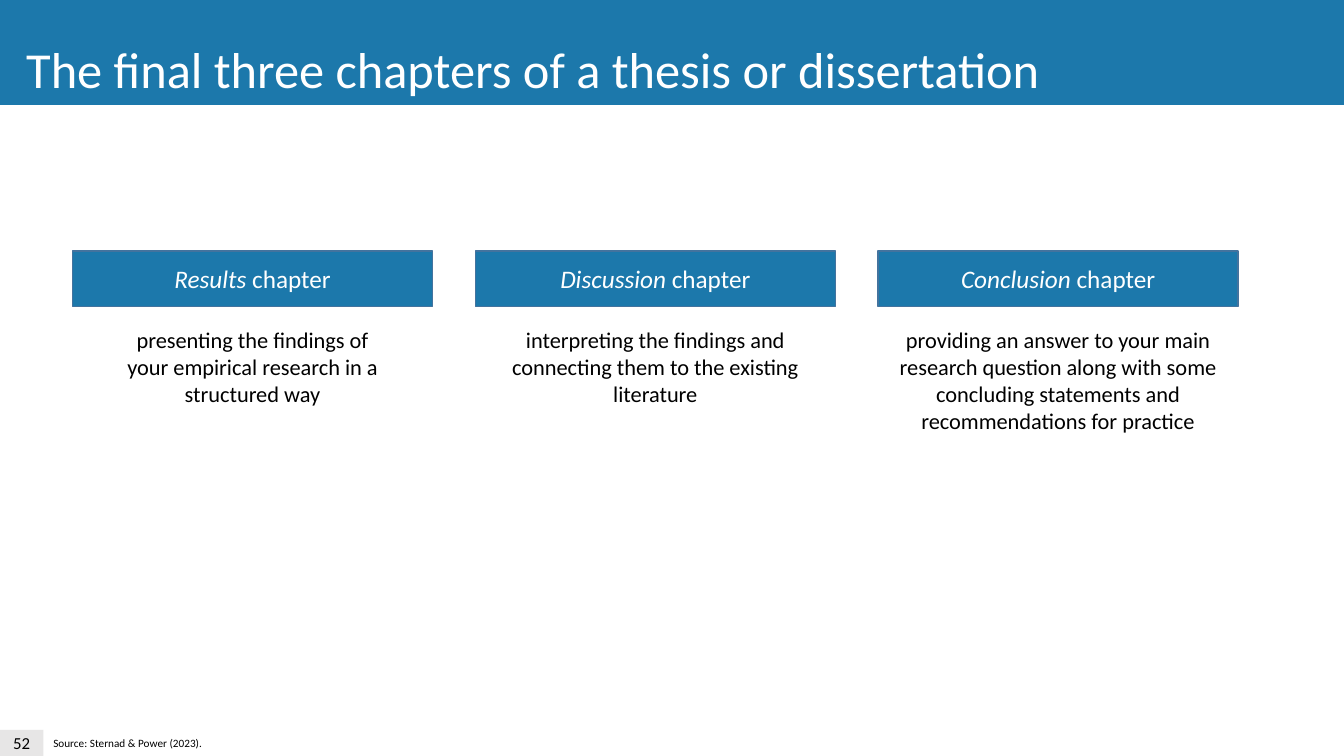
from pptx import Presentation
from pptx.dml.color import RGBColor
from pptx.enum.shapes import MSO_SHAPE as Preset
from pptx.enum.text import MSO_ANCHOR as Anchor, MSO_AUTO_SIZE as AutoSize, PP_ALIGN as Align
from pptx.util import Pt

EMU_PER_PX = 9144  # 100 px to the inch
FONT = "Calibri"
COLORS = {
    "blue": "1C78AB",
    "outline": "43739E",
    "grey": "E7E6E6",
    "white": "FFFFFF",
    "black": "000000",
}
CHAPTERS = [  # name, description, description width
    ("Results", "presenting the findings of your empirical research in a structured way", 275),
    ("Discussion", "interpreting the findings and connecting them to the existing literature", 357),
    ("Conclusion", "providing an answer to your main research question along with some "
                   "concluding statements and recommendations for practice", 403),
]


def px(length):
    return round(length * EMU_PER_PX)


def color(name):
    return RGBColor.from_string(COLORS[name])


def place(shape, box):
    for name, length in zip(("left", "top", "width", "height"), box):
        setattr(shape, name, px(length))


def write(shape, runs, size, color_name, align=Align.LEFT, **frame_format):
    """Write (text, italic) runs as one paragraph."""
    frame = shape.text_frame
    settings = {"word_wrap": True, "vertical_anchor": Anchor.TOP, "auto_size": AutoSize.NONE}
    for name, value in (settings | frame_format).items():
        setattr(frame, name, value)
    paragraph = frame.paragraphs[0]
    paragraph.alignment = align
    for text, italic in runs:
        run = paragraph.add_run()
        run.text = text
        font_format = {"name": FONT, "size": Pt(size), "italic": italic}
        for name, value in font_format.items():
            setattr(run.font, name, value)
        run.font.color.rgb = color(color_name)


def add_box(slide, box, fill, outline=None):
    shape = slide.shapes.add_shape(Preset.RECTANGLE, *map(px, box))
    shape.shadow.inherit = False
    shape.fill.solid()
    shape.fill.fore_color.rgb = color(fill)
    if outline:
        shape.line.color.rgb = color(outline)
        shape.line.width = Pt(1)
    else:
        shape.line.fill.background()
    return shape


def add_text(slide, box, text, size, **formats):
    shape = slide.shapes.add_textbox(*map(px, box))
    write(shape, [(text, False)], size, "black", **formats)


def add_header(slide, box, text):
    left, top, width, height = box
    banner = add_box(slide, box, "blue")
    title = slide.shapes.title
    title._element.addprevious(banner._element)  # banner goes behind the title
    place(title, (left + 16, top + 34, 1035, 71))
    write(title, [(text, False)], 36, "white", word_wrap=False)


def add_chapters(slide, box, chapters):
    left, top, width, height = box
    heading_width, heading_height = 357, 55
    step = (width - heading_width) / (len(chapters) - 1)
    for index, (name, description, text_width) in enumerate(chapters):
        column_left = left + index * step
        heading = add_box(slide, (column_left, top, heading_width, heading_height),
                          "blue", "outline")
        write(heading, [(name + " ", True), ("chapter", False)], 18, "white",
              Align.CENTER, vertical_anchor=Anchor.MIDDLE)
        text_left = column_left + (heading_width - text_width) / 2
        add_text(slide, (text_left, top + 70, text_width, height - 70), description, 16,
                 align=Align.CENTER)


def add_footer(slide, box, number, source):
    left, top, width, height = box
    number_width = 43
    number_box = add_box(slide, (left, top, number_width, height), "grey")
    write(number_box, [(number, False)], 12, "black", Align.CENTER,
          vertical_anchor=Anchor.MIDDLE, margin_left=0, margin_right=0)
    add_text(slide, (left + number_width, top + 2, width - number_width, height - 2),
             source, 8, word_wrap=False)


def main():
    presentation = Presentation()
    presentation.slide_width, presentation.slide_height = px(1333), px(750)
    slide = presentation.slides.add_slide(presentation.slide_layouts[5])
    add_header(slide, (0, -1, 1334, 105), "The final three chapters of a thesis or dissertation")
    add_chapters(slide, (72, 249, 1156, 188), CHAPTERS)
    add_footer(slide, (0, 724, 212, 26), "52", "Source: Sternad & Power (2023).")
    presentation.save("out.pptx")


if __name__ == "__main__":
    main()
